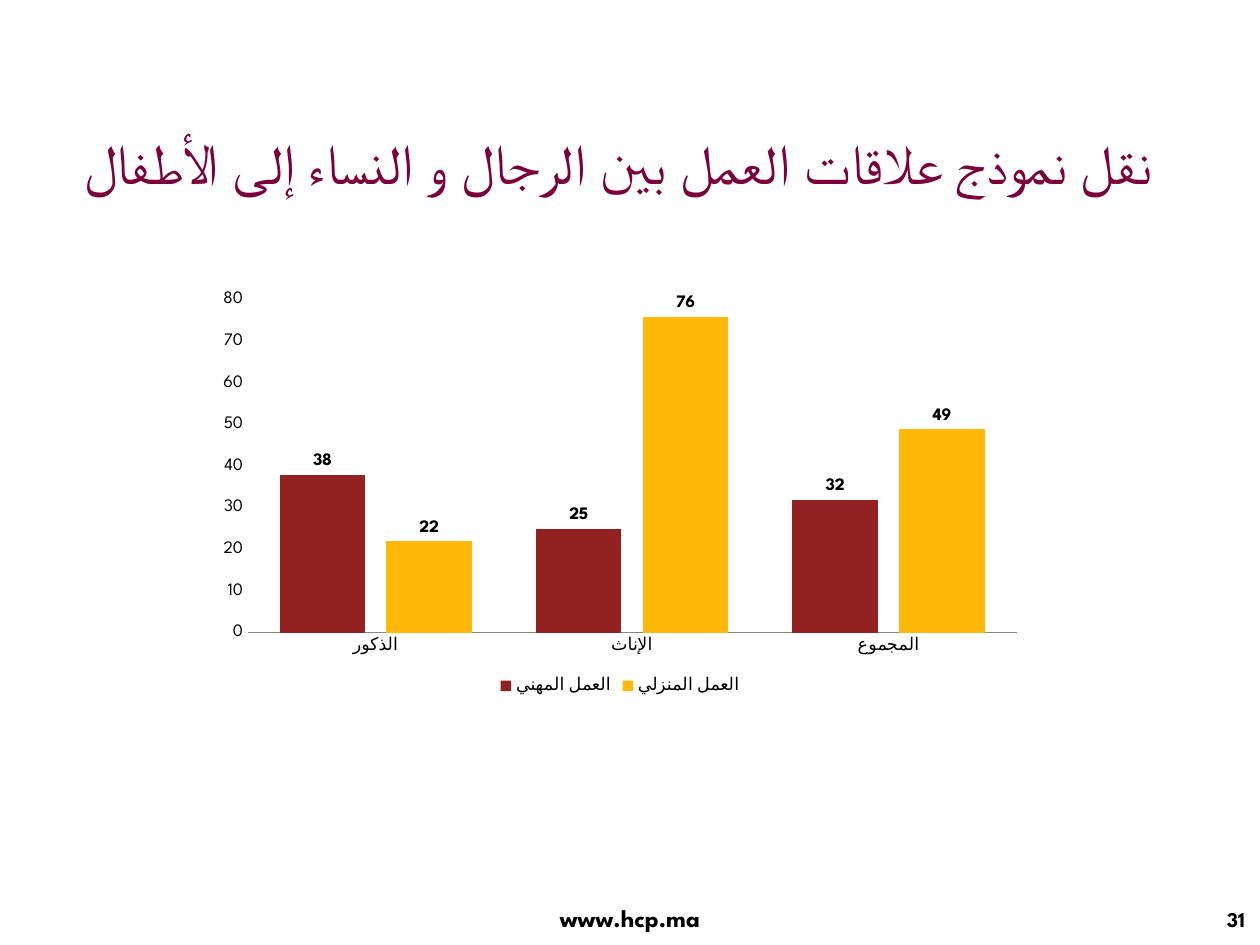
import pptx
import pptx.chart.data
import pptx.dml.color
import pptx.enum.chart
import pptx.enum.text
import pptx.util

Cm = pptx.util.Cm
Pt = pptx.util.Pt
RGBColor = pptx.dml.color.RGBColor
ALIGN = pptx.enum.text.PP_ALIGN
ANCHOR = pptx.enum.text.MSO_ANCHOR

PLUM = RGBColor(0x7B, 0x00, 0x3B)
BLACK = RGBColor(0x00, 0x00, 0x00)
GREY = RGBColor(0x86, 0x86, 0x86)
MAROON = RGBColor(0x92, 0x21, 0x22)
AMBER = RGBColor(0xFE, 0xB8, 0x0A)
HEADING_FONT = "Cabin"
BODY_FONT = "League Spartan"

CATEGORIES = ("الذكور", "الإناث", "المجموع")
SERIES = (
    ("العمل المهني", (38, 25, 32), MAROON),
    ("العمل المنزلي", (22, 76, 49), AMBER),
)


def style_font(font, name, size, color, bold=False):
    font.name = name
    font.size = Pt(size)
    font.color.rgb = color
    font.bold = bold


def add_text(page, left, top, width, height, text, name, size, color,
             align, anchor=ANCHOR.MIDDLE, bold=False):
    box = page.shapes.add_textbox(left, top, width, height)
    frame = box.text_frame
    frame.word_wrap = True
    frame.vertical_anchor = anchor
    para = frame.paragraphs[0]
    para.alignment = align
    span = para.add_run()
    span.text = text
    style_font(span.font, name, size, color, bold)


def add_title(page, left, top, width, height):
    add_text(page, left, top, width, height,
             "نقل نموذج علاقات العمل بين الرجال و النساء إلى الأطفال ",
             HEADING_FONT, 32, PLUM, ALIGN.CENTER)


def add_work_chart(page, left, top, width, height):
    chart_data = pptx.chart.data.CategoryChartData()
    chart_data.categories = CATEGORIES
    for name, values, _ in SERIES:
        chart_data.add_series(name, values)
    chart = page.shapes.add_chart(
        pptx.enum.chart.XL_CHART_TYPE.COLUMN_CLUSTERED,
        left, top, width, height, chart_data).chart
    style_font(chart.font, BODY_FONT, 10, BLACK)
    chart.has_title = False
    chart.has_legend = True
    chart.legend.position = pptx.enum.chart.XL_LEGEND_POSITION.BOTTOM
    chart.legend.include_in_layout = False

    plot = chart.plots[0]
    plot.gap_width = 75
    plot.overlap = -25
    plot.vary_by_categories = False
    for series, (_, _, color) in zip(plot.series, SERIES):
        series.format.fill.solid()
        series.format.fill.fore_color.rgb = color
        labels = series.data_labels
        labels.show_value = True
        labels.position = pptx.enum.chart.XL_LABEL_POSITION.OUTSIDE_END
        style_font(labels.font, BODY_FONT, 10, BLACK, True)

    for axis in (chart.category_axis, chart.value_axis):
        axis.major_tick_mark = pptx.enum.chart.XL_TICK_MARK.NONE
        axis.has_major_gridlines = False
    chart.category_axis.format.line.color.rgb = GREY
    chart.value_axis.format.line.fill.background()
    chart.value_axis.minimum_scale = 0
    chart.value_axis.maximum_scale = 80
    chart.value_axis.major_unit = 10


def add_footer(page, left, top, width, height):
    site_width = Cm(6)
    number_width = Cm(3.86)
    add_text(page, left + (width - site_width) // 2, top, site_width, height,
             "www.hcp.ma", BODY_FONT, 14, BLACK, ALIGN.CENTER, ANCHOR.TOP, True)
    add_text(page, left + width - number_width - Cm(0.05), top, number_width, height,
             "31", BODY_FONT, 12, BLACK, ALIGN.RIGHT, bold=True)


def main():
    deck = pptx.Presentation()
    deck.slide_width = Cm(25.4)
    deck.slide_height = Cm(19.05)
    page = deck.slides.add_slide(deck.slide_layouts[6])
    add_footer(page, Cm(0), Cm(18.08), deck.slide_width, Cm(0.88))
    add_title(page, Cm(0.41), Cm(2.18), Cm(24.41), Cm(2.18))
    add_work_chart(page, Cm(4.17), Cm(5.72), Cm(16.66), Cm(8.38))
    deck.save("out.pptx")


if __name__ == "__main__":
    main()
